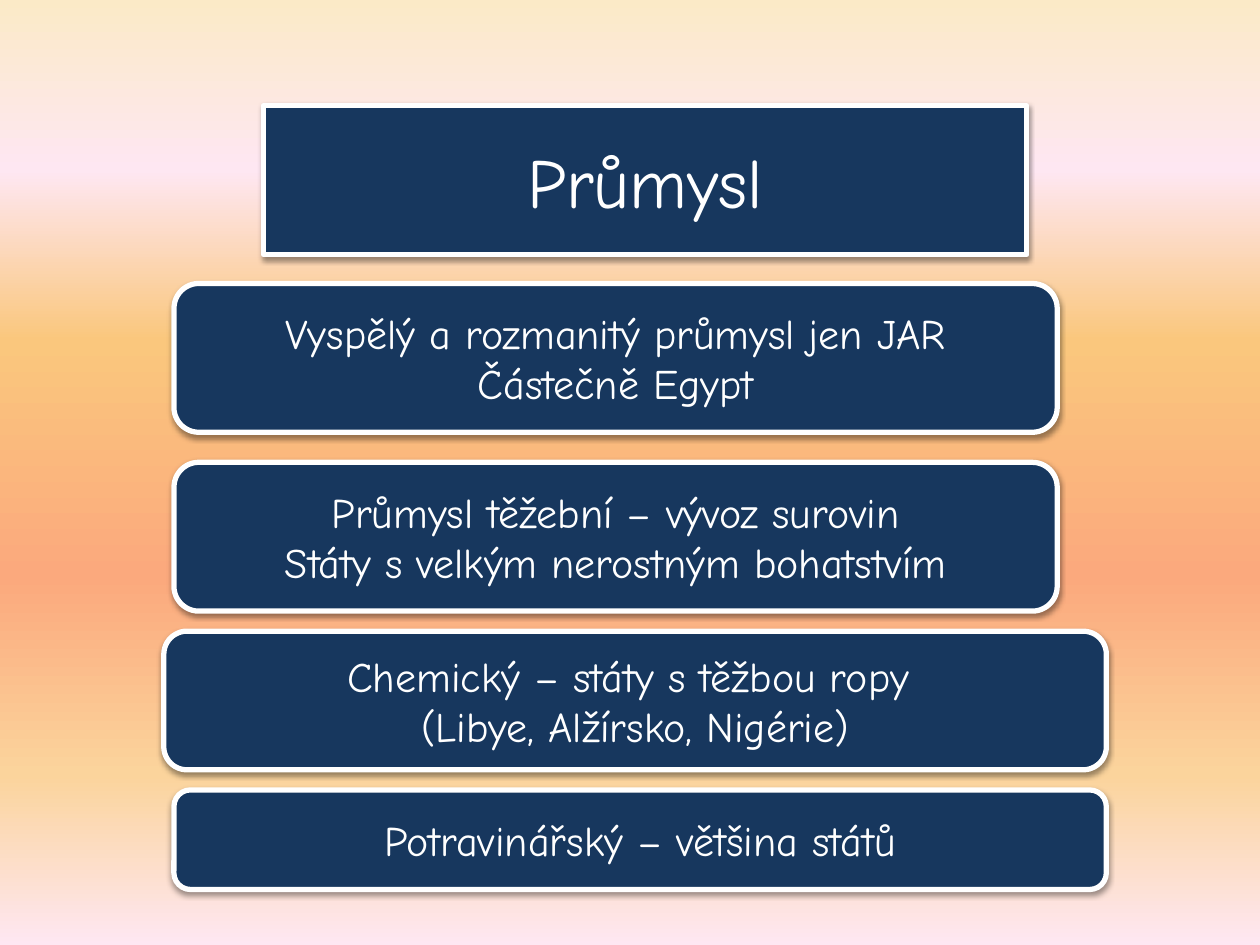
from lxml import etree
from pptx import Presentation
from pptx.dml.color import RGBColor
from pptx.enum.shapes import MSO_SHAPE
from pptx.enum.text import MSO_ANCHOR, MSO_AUTO_SIZE, PP_ALIGN
from pptx.oxml.ns import qn
from pptx.util import Pt

ROUNDED = MSO_SHAPE.ROUNDED_RECTANGLE
MIDDLE = MSO_ANCHOR.MIDDLE
CENTER = PP_ALIGN.CENTER
NO_AUTOFIT = MSO_AUTO_SIZE.NONE

FONT = "Comic Neue"
COLORS = {
    "panel": "17375E",
    "white": "FFFFFF",
    "shadow": "000000",
    "cream": "FBEAC7",
    "pink": "FEE7F2",
    "amber": "FAC77D",
    "coral": "FBA97D",
    "sand": "FBD49C",
}
BACKGROUND_STOPS = [
    (0, "cream"), (18, "pink"), (36, "amber"),
    (61, "coral"), (82, "sand"), (100, "pink"),
]
TITLE_BOUNDS = (150.5, 60.5, 436.3, 85)
PANELS = [
    ((99.4, 162, 504.7, 85),
     ["Vyspělý a rozmanitý průmysl jen JAR", "Částečně Egypt"]),
    ((99.4, 264.2, 504.7, 85),
     ["Průmysl těžební – vývoz surovin", "Státy s velkým nerostným bohatstvím"]),
    ((93.6, 360.7, 538.6, 79.2),
     ["Chemický – státy s těžbou ropy ", "(Libye, Alžírsko, Nigérie)"]),
    ((99.4, 451.4, 532.8, 56.9),
     ["Potravinářský – většina států"]),
]


def rgb(name):
    return RGBColor.from_string(COLORS[name])


def add_color(parent, name):
    return etree.SubElement(parent, qn("a:srgbClr"), val=COLORS[name])


def paint_background(page):
    fill = page.background.fill
    fill.gradient()
    fill.gradient_angle = 270
    stops = page.element.find(".//" + qn("a:gsLst"))
    for stop in list(stops):
        stops.remove(stop)
    for percent, name in BACKGROUND_STOPS:
        stop = etree.SubElement(stops, qn("a:gs"), pos=str(percent * 1000))
        add_color(stop, name)


def add_shadow(box):
    box.shadow.inherit = False
    effects = box.element.spPr.find(qn("a:effectLst"))
    shadow = etree.SubElement(
        effects, qn("a:outerShdw"), blurRad=str(Pt(3.1)), dist=str(Pt(1.6)),
        dir="5400000", rotWithShape="0")
    color = add_color(shadow, "shadow")
    etree.SubElement(color, qn("a:alpha"), val="38000")


def style_panel(box, lines, size):
    box.fill.solid()
    box.fill.fore_color.rgb = rgb("panel")
    box.line.color.rgb = rgb("white")
    box.line.width = Pt(3)
    add_shadow(box)
    frame = box.text_frame
    frame.text = "\n".join(lines)
    frame.word_wrap = True
    frame.auto_size = NO_AUTOFIT
    frame.vertical_anchor = MIDDLE
    for para in frame.paragraphs:
        para.alignment = CENTER
        para.font.name = FONT
        para.font.size = Pt(size)
        para.font.color.rgb = rgb("white")


def format_title(page, text):
    title = page.shapes.title
    title.left, title.top, title.width, title.height = map(Pt, TITLE_BOUNDS)
    outline = etree.SubElement(title.element.spPr, qn("a:prstGeom"), prst="roundRect")
    etree.SubElement(outline, qn("a:avLst"))
    style_panel(title, [text], 40)


def add_panel(page, bounds, lines):
    box = page.shapes.add_shape(ROUNDED, *map(Pt, bounds))
    style_panel(box, lines, 24)


def main():
    deck = Presentation()
    deck.slide_width, deck.slide_height = Pt(720), Pt(540)
    page = deck.slides.add_slide(deck.slide_layouts.get_by_name("Title Only"))
    paint_background(page)
    format_title(page, "Průmysl")
    for bounds, lines in PANELS:
        add_panel(page, bounds, lines)
    deck.save("out.pptx")


if __name__ == "__main__":
    main()
